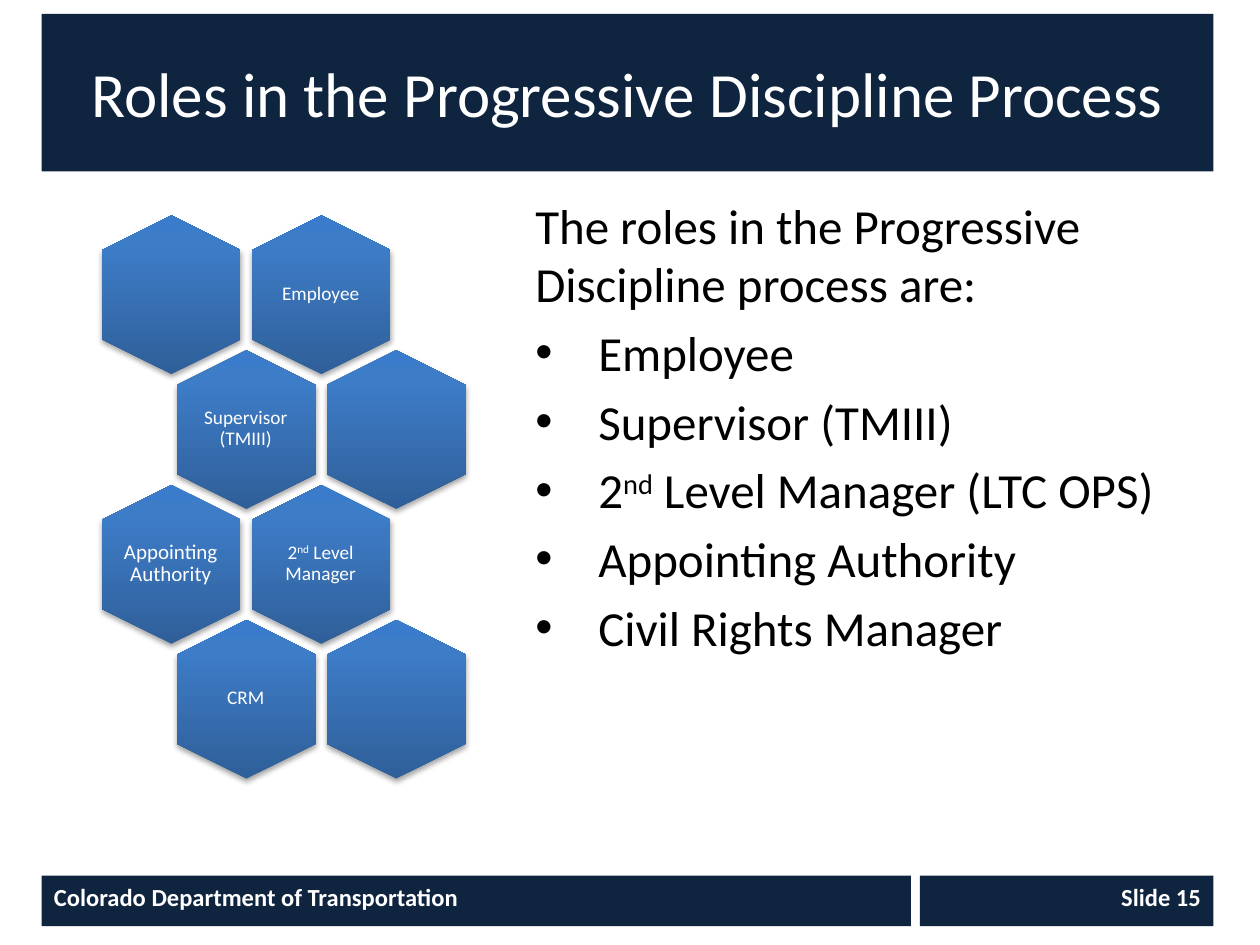
from pptx import Presentation
from pptx.dml.color import RGBColor
from pptx.enum.shapes import MSO_SHAPE
from pptx.enum.text import MSO_ANCHOR, PP_ALIGN
from pptx.oxml import parse_xml
from pptx.oxml.ns import nsdecls, qn
from pptx.util import Inches, Pt

COLORS = {
    "navy": "0F243E",
    "white": "FFFFFF",
    "black": "000000",
    "hex_dark": "2F5F99",
    "hex_mid": "3D7CC7",
    "hex_light": "3A7CCB",
}
GRADIENT = f"""<a:gradFill {nsdecls("a")} rotWithShape="0"><a:gsLst>
<a:gs pos="0"><a:srgbClr val="{COLORS['hex_dark']}"/></a:gs>
<a:gs pos="80000"><a:srgbClr val="{COLORS['hex_mid']}"/></a:gs>
<a:gs pos="100000"><a:srgbClr val="{COLORS['hex_light']}"/></a:gs>
</a:gsLst><a:lin ang="16200000" scaled="0"/></a:gradFill>"""
SHADOW = f"""<a:outerShdw {nsdecls("a")} blurRad="40000" dist="23000" dir="5400000" rotWithShape="0">
<a:srgbClr val="{COLORS['black']}"><a:alpha val="35000"/></a:srgbClr></a:outerShdw>"""


def write(para, text, size, color, bold=False):
    """Fill a paragraph; text between two carets is set as superscript."""
    for index, part in enumerate(text.split("^")):
        span = para.add_run()
        span.text = part
        span.font.name = "Calibri"
        span.font.size = Pt(size)
        span.font.bold = bold
        span.font.color.rgb = RGBColor.from_string(COLORS[color])
        if index % 2:
            span._r.get_or_add_rPr().set("baseline", "30000")


deck = Presentation()
deck.slide_width, deck.slide_height = Inches(10), Inches(7.5)
page = deck.slides.add_slide(deck.slide_layouts[5])
shapes = page.shapes

# Title band
title = shapes.title
title.left, title.top = Inches(0.33), Inches(0.11)
title.width, title.height = Inches(9.3), Inches(1.25)
title.fill.solid()
title.fill.fore_color.rgb = RGBColor.from_string(COLORS["navy"])
title.text_frame.vertical_anchor = MSO_ANCHOR.MIDDLE
title_para = title.text_frame.paragraphs[0]
title_para.alignment = PP_ALIGN.CENTER
write(title_para, "Roles in the Progressive Discipline Process", 36, "white")

# List of roles
roles = ["Employee", "Supervisor (TMIII)", "2^nd^ Level Manager (LTC OPS)",
         "Appointing Authority", "Civil Rights Manager"]
body = shapes.add_textbox(Inches(4.15), Inches(1.5), Inches(5.48), Inches(5.4))
frame = body.text_frame
frame.word_wrap = True
intro = frame.paragraphs[0]
intro.space_before = Pt(5.6)
write(intro, "The roles in the Progressive Discipline process are:", 28, "black")
for role in roles:
    para = frame.add_paragraph()
    para.space_before = Pt(5.6)
    write(para, role, 28, "black")
    properties = para._p.get_or_add_pPr()
    properties.set("marL", str(Inches(0.5)))
    properties.set("indent", str(-Inches(0.5)))
    properties.append(parse_xml(f'<a:buFont {nsdecls("a")} typeface="Arial"/>'))
    properties.append(parse_xml(f'<a:buChar {nsdecls("a")} char="•"/>'))

# Footer bars
for left, width, text, alignment in [
    (7.3, 2.33, "Slide 15", PP_ALIGN.RIGHT),
    (0.33, 6.9, "Colorado Department of Transportation", PP_ALIGN.LEFT),
]:
    bar = shapes.add_shape(MSO_SHAPE.RECTANGLE, Inches(left), Inches(6.95), Inches(width), Inches(0.4))
    bar.shadow.inherit = False
    bar.fill.solid()
    bar.fill.fore_color.rgb = RGBColor.from_string(COLORS["navy"])
    bar.line.fill.background()
    bar.text_frame.vertical_anchor = MSO_ANCHOR.TOP
    para = bar.text_frame.paragraphs[0]
    para.alignment = alignment
    write(para, text, 14, "white", bold=True)

# Honeycomb: every second row is shifted by half a column
honeycomb = [
    ["", "Employee"],
    ["Supervisor (TMIII)", ""],
    ["Appointing Authority", "2^nd^ Level Manager"],
    ["CRM", ""],
]
for row, labels in enumerate(honeycomb):
    for column, label in enumerate(labels):
        left = 0.73 + 1.19 * (column + row % 2 / 2)
        top = 1.79 + 1.07 * row
        cell = shapes.add_shape(MSO_SHAPE.HEXAGON, Inches(left), Inches(top), Inches(1.26), Inches(1.1))
        cell.rotation = 90
        cell.line.fill.background()
        cell.fill.background()
        properties = cell._element.spPr
        properties.replace(properties.find(qn("a:noFill")), parse_xml(GRADIENT))
        cell.shadow.inherit = False
        properties.find(qn("a:effectLst")).append(parse_xml(SHADOW))
        if not label:
            continue
        box = shapes.add_textbox(Inches(left + 0.25), Inches(top + 0.11), Inches(0.75), Inches(0.87))
        frame = box.text_frame
        frame.word_wrap = True
        frame.vertical_anchor = MSO_ANCHOR.MIDDLE
        frame.margin_left = frame.margin_right = frame.margin_top = frame.margin_bottom = 0
        para = frame.paragraphs[0]
        para.alignment = PP_ALIGN.CENTER
        para.line_spacing = 0.9
        write(para, label, 12 if label == "Appointing Authority" else 11, "white")

deck.save("out.pptx")
